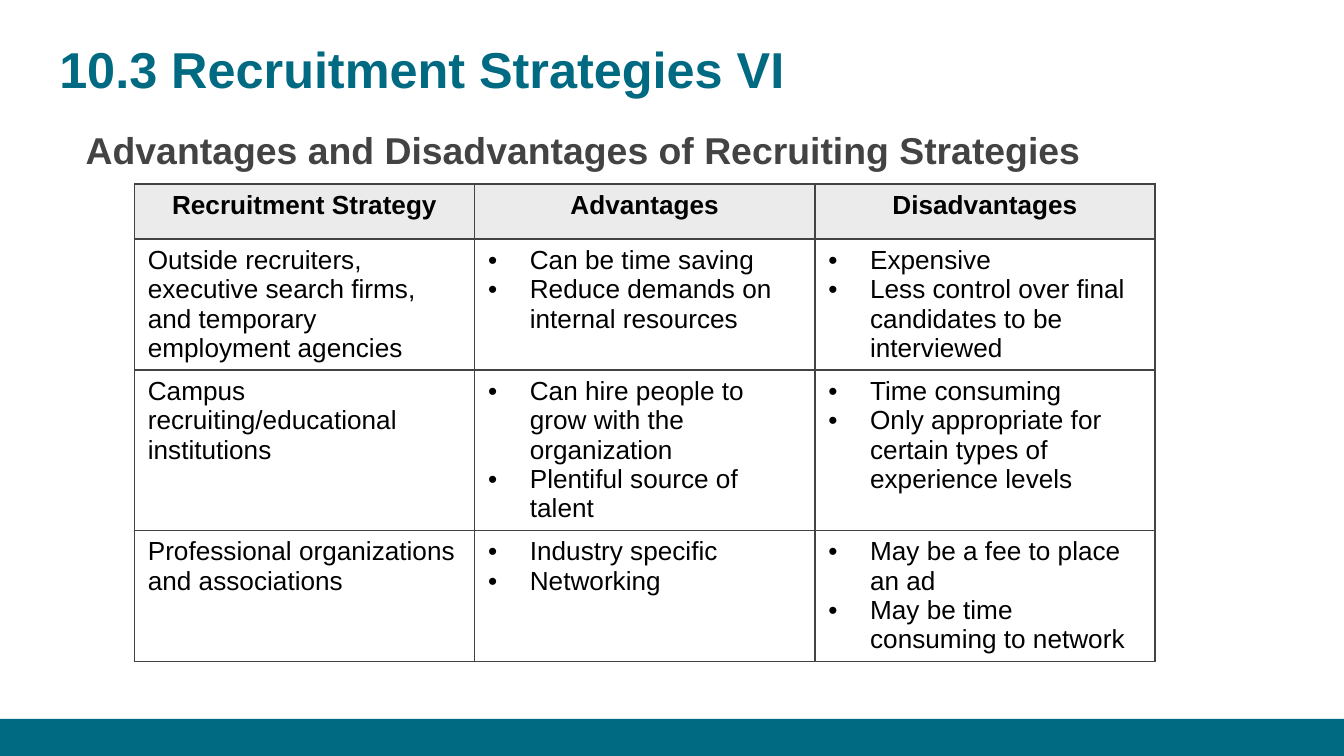
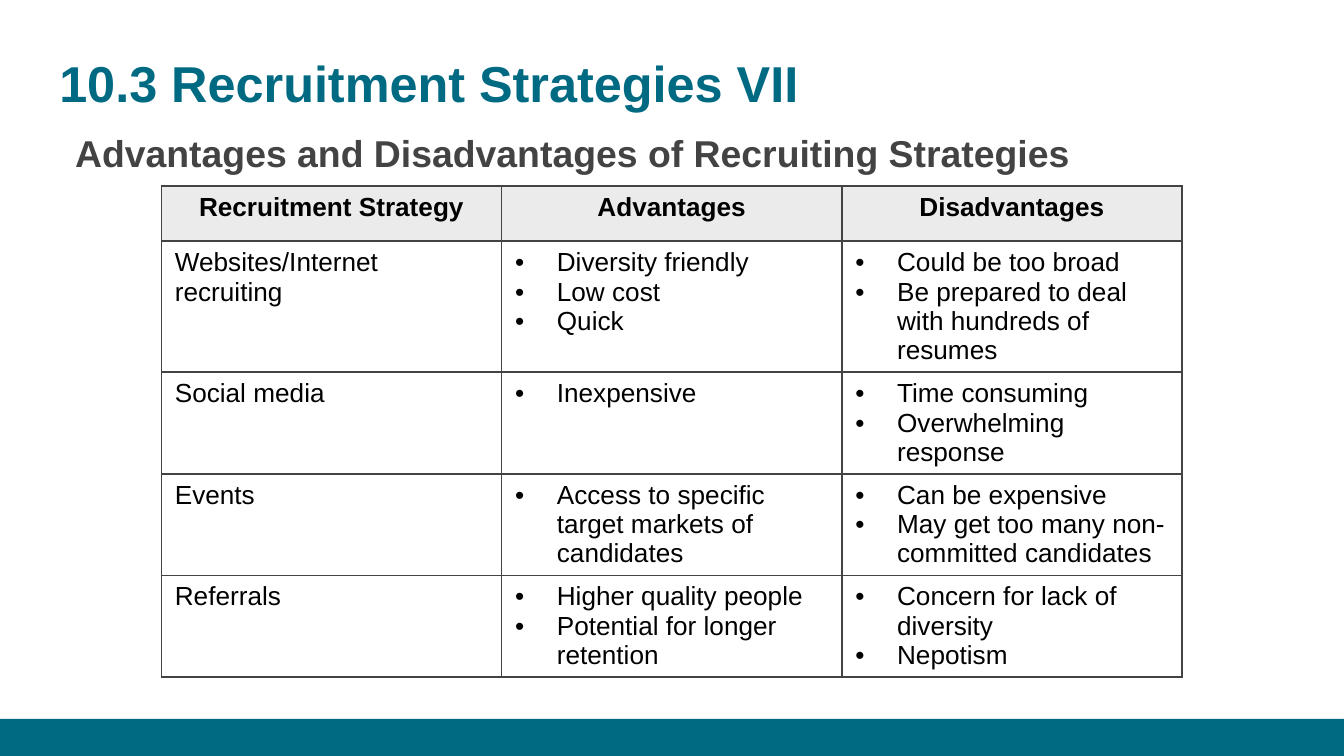
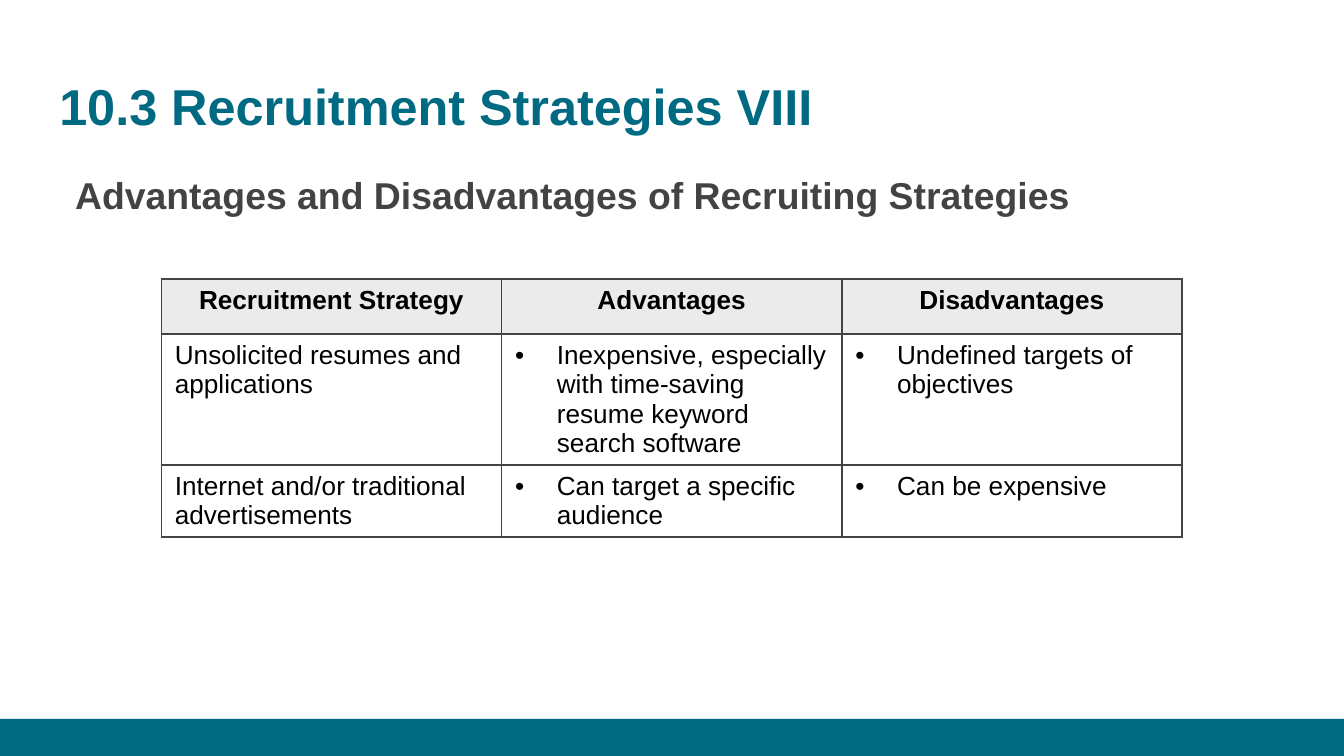
import pptx
import pptx.dml.color
import pptx.enum.shapes
import pptx.enum.text
import pptx.oxml
import pptx.oxml.ns
import pptx.util

Cm = pptx.util.Cm
Pt = pptx.util.Pt
RGBColor = pptx.dml.color.RGBColor
PP_ALIGN = pptx.enum.text.PP_ALIGN
MSO_ANCHOR = pptx.enum.text.MSO_ANCHOR

TEAL = RGBColor(0x00, 0x6A, 0x83)
GREY = RGBColor(0x43, 0x43, 0x43)
PALE = RGBColor(0xEB, 0xEB, 0xEB)
BLACK = RGBColor(0x00, 0x00, 0x00)

FONT = "Arial"
TITLE_ONLY = 5
SUBTITLE = "Advantages and Disadvantages of Recruiting Strategies"
HEADER = ["Recruitment Strategy", "Advantages", "Disadvantages"]


def add_xml(parent, tag, body="", **attrs):
    """Append an element of the drawing namespace to parent."""
    attr_text = "".join(f' {name}="{value}"' for name, value in attrs.items())
    xml = f'<a:{tag} {pptx.oxml.ns.nsdecls("a")}{attr_text}>{body}</a:{tag}>'
    parent.append(pptx.oxml.parse_xml(xml))


class Deck:
    left, width = Cm(0.87), Cm(23.67)
    inset = Cm(0.25)
    band_top = Cm(13.59)
    col_width, row_height = Cm(6.43), Cm(1.04)
    bullet_indent = Cm(0.79)

    def __init__(self):
        self.prs = pptx.Presentation()
        self.prs.slide_width, self.prs.slide_height = Cm(25.4), Cm(14.29)
        self.s = None

    def new_slide(self):
        self.s = self.prs.slides.add_slide(self.prs.slide_layouts[TITLE_ONLY])

    def style(self, p, size, color, bold):
        for r in p.runs:
            r.font.name = FONT
            r.font.size = Pt(size)
            r.font.bold = bold
            r.font.color.rgb = color

    def set_frame(self, tf, anchor):
        tf.word_wrap = True
        tf.auto_size = pptx.enum.text.MSO_AUTO_SIZE.NONE
        tf.vertical_anchor = anchor
        tf.margin_left = tf.margin_right = self.inset
        tf.margin_top = tf.margin_bottom = self.inset

    def band(self):
        sp = self.s.shapes.add_shape(
            pptx.enum.shapes.MSO_SHAPE.RECTANGLE, 0, self.band_top,
            self.prs.slide_width, self.prs.slide_height - self.band_top)
        sp.shadow.inherit = False
        sp.fill.solid()
        sp.fill.fore_color.rgb = TEAL
        sp.line.fill.background()

    def title(self, text, top):
        sp = self.s.shapes.title
        sp.left, sp.top, sp.width, sp.height = self.left, top, self.width, Cm(1.67)
        tf = sp.text_frame
        self.set_frame(tf, MSO_ANCHOR.BOTTOM)
        tf.text = text
        p = tf.paragraphs[0]
        p.alignment = PP_ALIGN.LEFT
        self.style(p, 27, TEAL, True)

    def subtitle(self, text, top, indent):
        sp = self.s.shapes.add_textbox(self.left, top, self.width, Cm(9.28))
        tf = sp.text_frame
        self.set_frame(tf, MSO_ANCHOR.TOP)
        tf.text = text
        p = tf.paragraphs[0]
        p.line_spacing = 1.1
        p._p.get_or_add_pPr().set("marL", str(indent))
        self.style(p, 20, GREY, True)

    def bullet(self, p):
        pPr = p._p.get_or_add_pPr()
        pPr.set("marL", str(self.bullet_indent))
        pPr.set("indent", str(-self.bullet_indent))
        add_xml(pPr, "buClr", f'<a:srgbClr val="{BLACK}"/>')
        add_xml(pPr, "buFont", typeface=FONT)
        add_xml(pPr, "buChar", char="•")

    def borders(self, cell):
        tcPr = cell._tc.get_or_add_tcPr()
        line = f'<a:solidFill><a:srgbClr val="{GREY}"/></a:solidFill>'
        for side in "LRTB":
            add_xml(tcPr, f"ln{side}", line, w=Pt(1))

    def cell(self, cell, content, is_header):
        """Fill a cell; a list becomes bullets, a string plain text."""
        self.borders(cell)
        if is_header:
            cell.fill.solid()
            cell.fill.fore_color.rgb = PALE
        else:
            cell.fill.background()
        bulleted = isinstance(content, list)
        cell.text_frame.text = "\n".join(content) if bulleted else content
        for p in cell.text_frame.paragraphs:
            if is_header:
                p.alignment = PP_ALIGN.CENTER
            if bulleted:
                self.bullet(p)
            self.style(p, 14, BLACK, is_header)

    def table(self, rows, left, top, height):
        rows = [HEADER, *rows]
        frame = self.s.shapes.add_table(len(rows), len(HEADER), left, top,
                                        self.col_width * len(HEADER), height)
        table = frame.table
        table.horz_banding = False
        for column in table.columns:
            column.width = self.col_width
        for i, contents in enumerate(rows):
            table.rows[i].height = self.row_height
            for j, content in enumerate(contents):
                self.cell(table.cell(i, j), content, i == 0)
        frame.height = height


AGENCIES_TO_ASSOCIATIONS = [
    ["Outside recruiters, executive search firms, and temporary employment agencies",
     ["Can be time saving", "Reduce demands on internal resources"],
     ["Expensive", "Less control over final candidates to be interviewed"]],
    ["Campus recruiting/educational institutions",
     ["Can hire people to grow with the organization", "Plentiful source of talent"],
     ["Time consuming", "Only appropriate for certain types of experience levels"]],
    ["Professional organizations and associations",
     ["Industry specific", "Networking"],
     ["May be a fee to place an ad", "May be time consuming to network"]],
]
WEBSITES_TO_REFERRALS = [
    ["Websites/Internet recruiting",
     ["Diversity friendly", "Low cost", "Quick"],
     ["Could be too broad", "Be prepared to deal with hundreds of resumes"]],
    ["Social media",
     ["Inexpensive"],
     ["Time consuming", "Overwhelming response"]],
    ["Events",
     ["Access to specific target markets of candidates"],
     ["Can be expensive", "May get too many non-committed candidates"]],
    ["Referrals",
     ["Higher quality people", "Potential for longer retention"],
     ["Concern for lack of diversity", "Nepotism"]],
]
RESUMES_AND_ADVERTISEMENTS = [
    ["Unsolicited resumes and applications",
     ["Inexpensive, especially with time-saving resume keyword search software"],
     ["Undefined targets of objectives"]],
    ["Internet and/or traditional advertisements",
     ["Can target a specific audience"],
     ["Can be expensive"]],
]

# number, title top, subtitle top and indent, table rows, left, top and height
SLIDES = [
    ("VI", Cm(0.45), Cm(2.07), Cm(0.5),
     AGENCIES_TO_ASSOCIATIONS, Cm(2.54), Cm(3.48), Cm(9.49)),
    ("VII", Cm(0.7), Cm(2.12), Cm(0.3),
     WEBSITES_TO_REFERRALS, Cm(3.05), Cm(3.52), Cm(9.74)),
    ("VIII", Cm(1.15), Cm(2.93), Cm(0.3),
     RESUMES_AND_ADVERTISEMENTS, Cm(3.05), Cm(5.27), Cm(5.11)),
]


def main():
    deck = Deck()
    for number, title_top, sub_top, indent, rows, left, top, height in SLIDES:
        deck.new_slide()
        deck.band()
        deck.title(f"10.3 Recruitment Strategies {number}", title_top)
        deck.subtitle(SUBTITLE, sub_top, indent)
        deck.table(rows, left, top, height)
    deck.prs.save("out.pptx")


if __name__ == "__main__":
    main()
